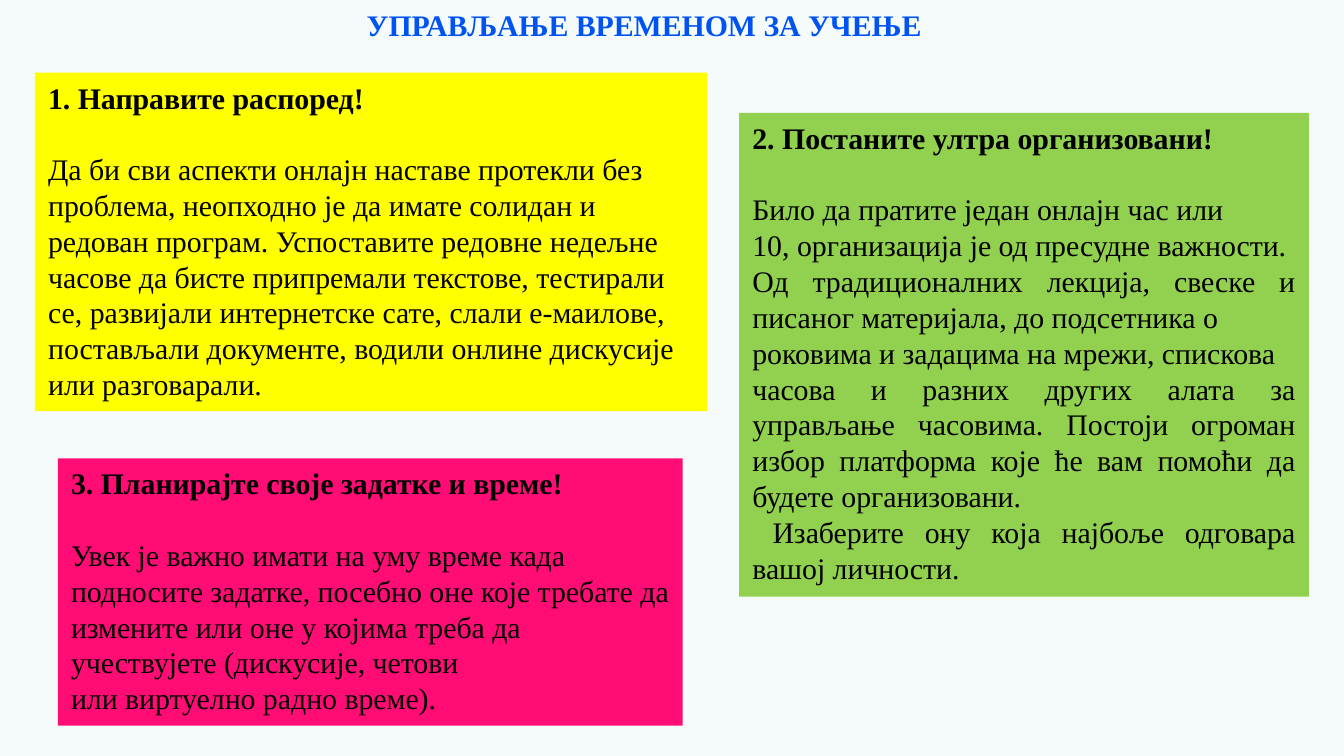
from dataclasses import dataclass

from pptx import Presentation
from pptx.dml.color import RGBColor
from pptx.enum.shapes import MSO_SHAPE
from pptx.enum.text import MSO_ANCHOR, MSO_AUTO_SIZE, PP_ALIGN
from pptx.util import Inches, Pt


@dataclass(frozen=True)
class Theme:
    font: str = "Times New Roman"
    size: int = 16
    heading_gap: float = 19.2
    background: str = "F5FBFB"
    title: str = "0053F0"
    text: str = "000000"
    yellow: str = "FFFF00"
    green: str = "92D050"
    pink: str = "FF0D74"


theme = Theme()


def add_text(para, text, color, bold=False):
    span = para.add_run()
    span.text = text
    span.font.name = theme.font
    span.font.size = Pt(theme.size)
    span.font.bold = bold
    span.font.color.rgb = RGBColor.from_string(color)


# Widescreen page, 16:9
deck = Presentation()
deck.slide_width = Inches(10)
deck.slide_height = Inches(10) * 9 // 16
page = deck.slides.add_slide(deck.slide_layouts[6])
page.background.fill.solid()
page.background.fill.fore_color.rgb = RGBColor.from_string(theme.background)

# Title
title = page.shapes.add_textbox(Inches(2.63), Inches(0), Inches(4.41), Inches(0.37))
title.text_frame.word_wrap = False
title.text_frame.auto_size = MSO_AUTO_SIZE.SHAPE_TO_FIT_TEXT
add_text(title.text_frame.paragraphs[0], "УПРАВЉАЊЕ ВРЕМЕНОМ ЗА УЧЕЊЕ", theme.title, bold=True)

# Advice cards: position, fill, alignment, heading, body paragraphs
cards = [
    ((0.26, 0.54, 5, 2.52), theme.yellow, PP_ALIGN.LEFT, "1. Направите распоред!", [
        "Да би сви аспекти онлајн наставе протекли без проблема, неопходно је да имате "
        "солидан и редован програм. Успоставите редовне недељне часове да бисте "
        "припремали текстове, тестирали се, развијали интернетске сате, слали е-маилове, "
        "постављали документе, водили онлине дискусије или разговарали.",
    ]),
    ((5.5, 0.84, 4.24, 3.6), theme.green, PP_ALIGN.JUSTIFY, "2. Постаните ултра организовани!", [
        "Било да пратите један онлајн час или",
        "10, организација је од пресудне важности.",
        "Од традиционалних лекција, свеске и писаног материјала, до подсетника о",
        "роковима и задацима на мрежи, спискова",
        "часова и разних других алата за управљање часовима. Постоји огроман избор "
        "платформа које ће вам помоћи да будете организовани.",
        "Изаберите ону која најбоље одговара вашој личности.",
    ]),
    ((0.43, 3.41, 4.65, 1.99), theme.pink, PP_ALIGN.LEFT, "3. Планирајте своје задатке и време!", [
        "Увек је важно имати на уму време када подносите задатке, посебно оне које "
        "требате да измените или оне у којима треба да учествујете (дискусије, четови",
        "или виртуелно радно време).",
    ]),
]

for place, fill, alignment, heading, body in cards:
    box = page.shapes.add_shape(MSO_SHAPE.RECTANGLE, *map(Inches, place))
    box.shadow.inherit = False
    box.fill.solid()
    box.fill.fore_color.rgb = RGBColor.from_string(fill)
    box.line.fill.background()
    frame = box.text_frame
    frame.word_wrap = True
    frame.vertical_anchor = MSO_ANCHOR.TOP
    frame.auto_size = MSO_AUTO_SIZE.SHAPE_TO_FIT_TEXT

    para = frame.paragraphs[0]
    para.alignment = alignment
    para.space_after = Pt(theme.heading_gap)
    add_text(para, heading, theme.text, bold=True)
    for text in body:
        para = frame.add_paragraph()
        para.alignment = alignment
        add_text(para, text, theme.text)

    # The closing sentence of the justified card is indented
    if alignment == PP_ALIGN.JUSTIFY:
        para._p.get_or_add_pPr().set("indent", str(Inches(0.15)))

deck.save("out.pptx")
